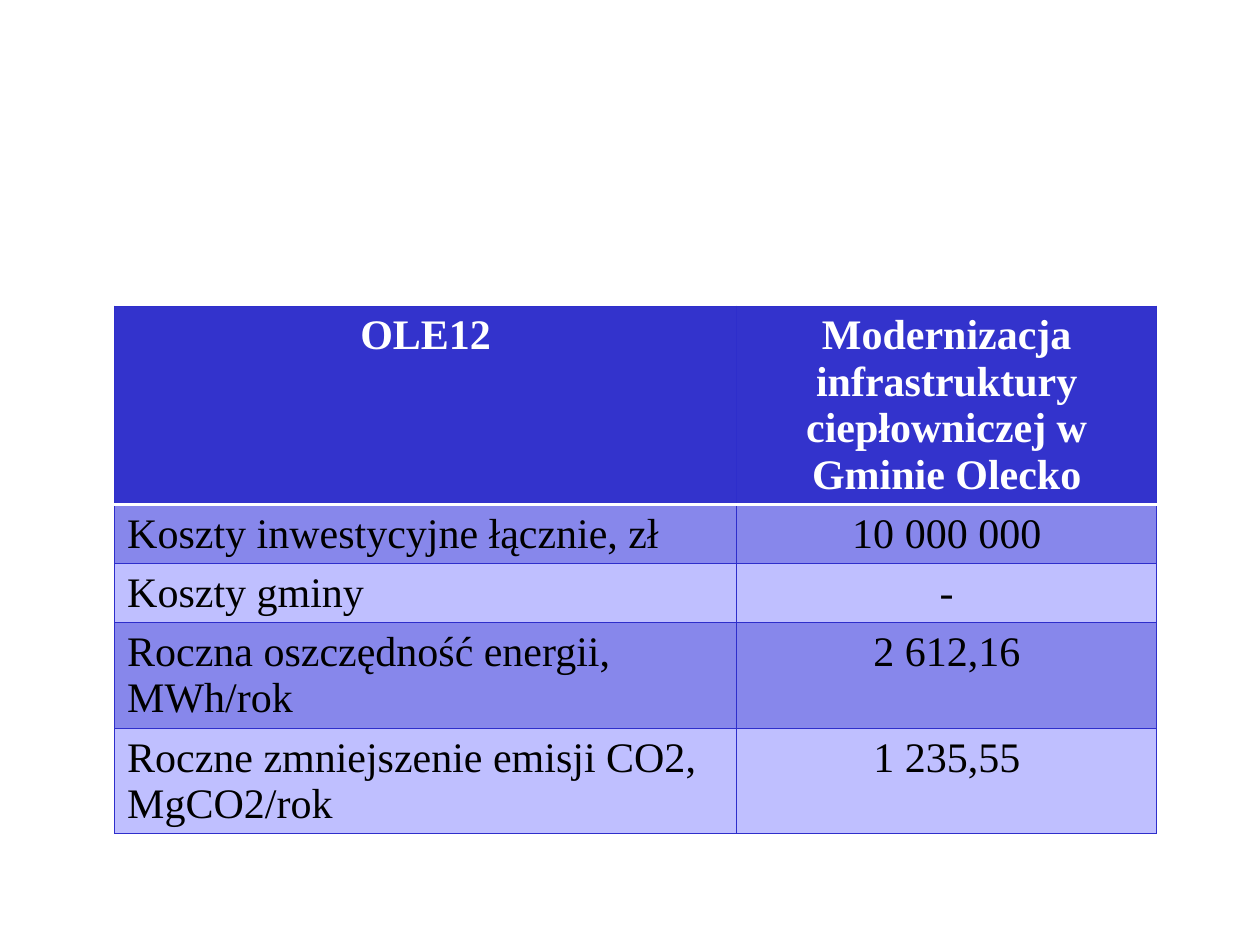
from dataclasses import dataclass

from lxml import etree
from pptx import Presentation
from pptx.dml.color import RGBColor
from pptx.enum.text import PP_ALIGN
from pptx.oxml.ns import qn
from pptx.util import Pt

LEFT, CENTER = PP_ALIGN.LEFT, PP_ALIGN.CENTER


@dataclass(frozen=True)
class Theme:
    font: str = "Times New Roman"
    size: float = 24
    head: str = "3333CC"
    dark: str = "8787EB"
    light: str = "BFBFFF"
    line: str = "2E2ECB"
    white: str = "FFFFFF"
    black: str = "000000"


theme = Theme()


def add_edge(cell, side, color, width):
    props = cell._tc.get_or_add_tcPr()
    edge = etree.SubElement(props, qn(f"a:ln{side}"), w=str(Pt(width)))
    fill = etree.SubElement(edge, qn("a:solidFill"))
    etree.SubElement(fill, qn("a:srgbClr"), val=color)


# Slide
deck = Presentation()
deck.slide_width, deck.slide_height = Pt(720), Pt(540)
slide = deck.slides.add_slide(deck.slide_layouts[6])

# Table grid
rows = [
    ("OLE12", "Modernizacja infrastruktury ciepłowniczej w Gminie Olecko"),
    ("Koszty inwestycyjne łącznie, zł", "10 000 000"),
    ("Koszty gminy", "-"),
    ("Roczna oszczędność energii, MWh/rok", "2 612,16"),
    ("Roczne zmniejszenie emisji CO2, MgCO2/rok", "1 235,55"),
]
widths = (355.5, 240)
heights = [60.5] + [29.5] * 4
frame = slide.shapes.add_table(len(rows), len(widths), Pt(65.5), Pt(175),
                               Pt(sum(widths)), Pt(sum(heights)))
table = frame.table
for col, width in zip(table.columns, widths):
    col.width = Pt(width)
for row, height in zip(table.rows, heights):
    row.height = Pt(height)

# Cells: header row, then alternating bands
for r, texts in enumerate(rows):
    head = r == 0
    band = theme.head if head else theme.dark if r % 2 else theme.light
    for c, text in enumerate(texts):
        cell = table.cell(r, c)
        cell.text = text
        para = cell.text_frame.paragraphs[0]
        para.alignment = CENTER if head or c else LEFT
        para.font.name = theme.font
        para.font.size = Pt(theme.size)
        para.font.bold = head
        para.font.color.rgb = RGBColor.from_string(
            theme.white if head else theme.black)

        # Borders: a white rule parts the header from the body
        for side in "LRTB":
            rule = (r, side) in ((0, "B"), (1, "T"))
            add_edge(cell, side, theme.white if rule else theme.line,
                     2 if rule else 0.75)
        cell.fill.solid()
        cell.fill.fore_color.rgb = RGBColor.from_string(band)

deck.save("out.pptx")
